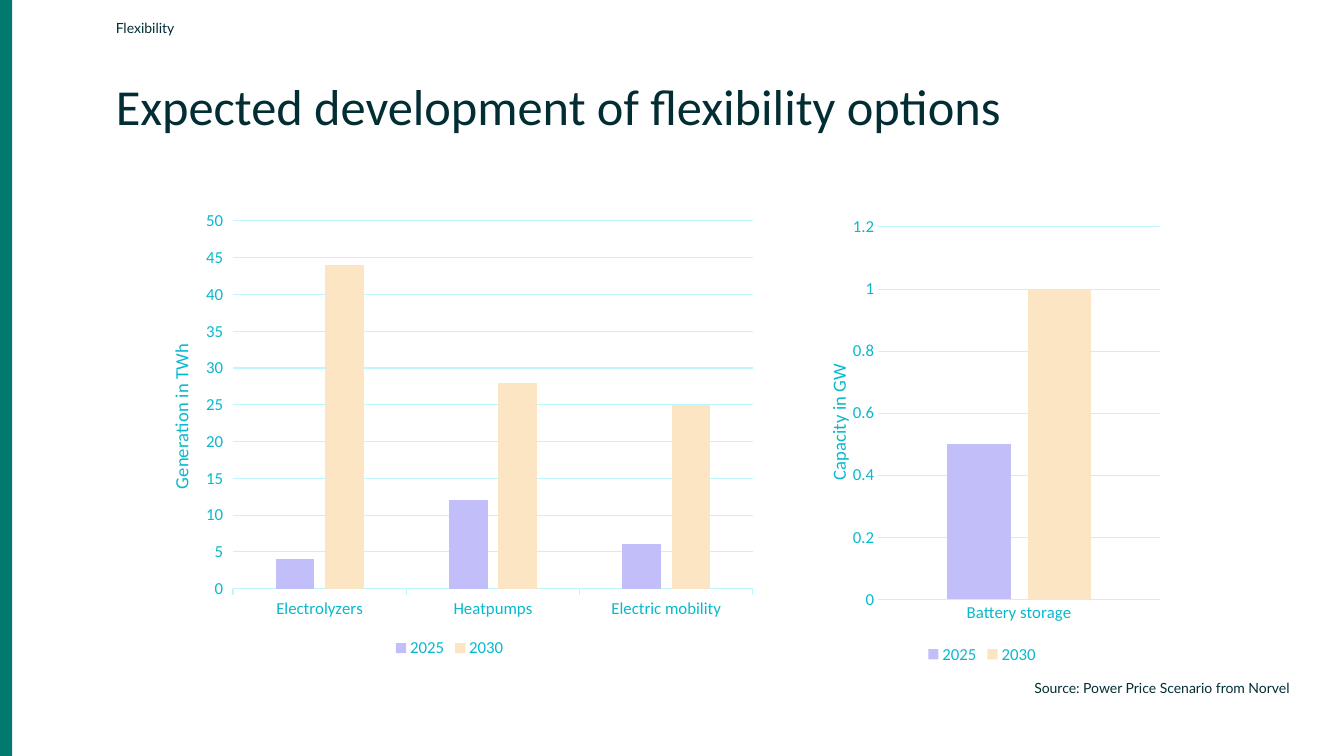
import pptx
import pptx.util
import pptx.oxml
import pptx.dml.color
import pptx.chart.data
import pptx.enum.chart
import pptx.enum.shapes
import pptx.enum.text
from pptx.util import Inches, Pt


def color(value):
    return pptx.dml.color.RGBColor.from_string(value)


class SlideBuilder:
    dark = "022E33"
    green = "01796F"
    cyan = "08B9CD"
    grid = "BDF6FC"
    series_colors = ("C1BEFA", "FBE5C3")

    def __init__(self, slide):
        self.slide = slide

    def style_font(self, font, size, name="Calibri", fill=cyan):
        font.size = Pt(size)
        font.name = name
        font.bold = False
        font.color.rgb = color(fill)

    def style_line(self, line):
        line.color.rgb = color(self.grid)
        line.width = Pt(0.75)

    def bar(self, left, top, width, height):
        shape = self.slide.shapes.add_shape(
            pptx.enum.shapes.MSO_SHAPE.RECTANGLE,
            Inches(left), Inches(top), Inches(width), Inches(height))
        shape.shadow.inherit = False
        shape.fill.solid()
        shape.fill.fore_color.rgb = color(self.green)
        shape.line.fill.background()

    def text(self, box, words, size, name="Lato", spacing=1.0, anchor="BOTTOM"):
        shape = self.slide.shapes.add_textbox(*(Inches(length) for length in box))
        frame = shape.text_frame
        frame.word_wrap = True
        frame.vertical_anchor = pptx.enum.text.MSO_ANCHOR[anchor]
        paragraph = frame.paragraphs[0]
        paragraph.text = words
        paragraph.line_spacing = spacing
        self.style_font(paragraph.font, size, name, self.dark)

    def layout(self, x, y, width=None, height=None):
        target = '<c:layoutTarget val="inner"/>' if width else ""
        extent = f'<c:w val="{width}"/><c:h val="{height}"/>' if width else ""
        return pptx.oxml.parse_xml(
            '<c:layout xmlns:c="http://schemas.openxmlformats.org/drawingml/2006/chart">'
            f'<c:manualLayout>{target}<c:xMode val="edge"/><c:yMode val="edge"/>'
            f'<c:x val="{x}"/><c:y val="{y}"/>{extent}</c:manualLayout></c:layout>')

    def replace_layout(self, element, layout, position):
        for old in element.xpath("c:layout"):
            element.remove(old)
        element.insert(position, layout)

    def column_chart(self, box, categories, series, axis_title, maximum, step,
                     tick, plot_layout, title_layout):
        data = pptx.chart.data.CategoryChartData()
        data.categories = categories
        for name, values in series.items():
            data.add_series(name, values)
        chart = self.slide.shapes.add_chart(
            pptx.enum.chart.XL_CHART_TYPE.COLUMN_CLUSTERED,
            *(Inches(length) for length in box), data).chart
        self.style_font(chart.font, 12)
        chart.has_title = False
        chart.has_legend = True
        chart.legend.position = pptx.enum.chart.XL_LEGEND_POSITION.BOTTOM
        chart.legend.include_in_layout = False
        self.style_font(chart.legend.font, 12)

        plot = chart.plots[0]
        plot.vary_by_categories = False
        plot.gap_width = 219
        plot.overlap = -27
        for column, fill in zip(plot.series, self.series_colors):
            column.format.fill.solid()
            column.format.fill.fore_color.rgb = color(fill)

        category_axis, value_axis = chart.category_axis, chart.value_axis
        for axis in (category_axis, value_axis):
            axis.major_tick_mark = pptx.enum.chart.XL_TICK_MARK[tick]
            axis.minor_tick_mark = pptx.enum.chart.XL_TICK_MARK.NONE
            self.style_font(axis.tick_labels.font, 12)
        self.style_line(category_axis.format.line)
        value_axis.format.line.fill.background()
        value_axis.has_major_gridlines = True
        self.style_line(value_axis.major_gridlines.format.line)
        value_axis.minimum_scale = 0
        value_axis.maximum_scale = maximum
        value_axis.major_unit = step

        title = value_axis.axis_title
        paragraph = title.text_frame.paragraphs[0]
        paragraph.text = axis_title
        self.style_font(paragraph.font, 13.3)
        self.replace_layout(title._element, self.layout(*title_layout), 1)
        plot_area = chart._chartSpace.xpath("c:chart/c:plotArea")[0]
        self.replace_layout(plot_area, self.layout(*plot_layout), 0)


def main():
    presentation = pptx.Presentation()
    presentation.slide_width = Inches(13.33)
    presentation.slide_height = Inches(7.5)
    builder = SlideBuilder(presentation.slides.add_slide(presentation.slide_layouts[6]))

    builder.bar(0, 0, 0.12, 7.5)
    builder.text((1.05, 0.55, 10.66, 0.84), "Expected development of flexibility options",
                 36, "Calibri", Pt(38))
    builder.text((10.16, 6.69, 3.1, 0.27), "Source: Power Price Scenario from Norvel",
                 10, anchor="TOP")
    builder.text((1.05, 0.13, 9.26, 0.28), "Flexibility", 10, spacing=0.9)
    builder.column_chart(
        (1.39, 2.01, 6.14, 4.56), ["Electrolyzers", "Heatpumps", "Electric mobility"],
        {"2025": (4, 12, 6), "2030": (44, 28, 25)}, "Generation in TWh", 50, 5,
        "OUTSIDE", (0.15, 0.04, 0.84, 0.8), (0.04, 0.3))
    builder.column_chart(
        (7.9, 2.07, 3.68, 4.56), ["Battery storage"],
        {"2025": (0.5,), "2030": (1,)}, "Capacity in GW", 1.2, 0.2,
        "NONE", (0.22, 0.04, 0.76, 0.81), (0.07, 0.33))
    presentation.save("out.pptx")


if __name__ == "__main__":
    main()
